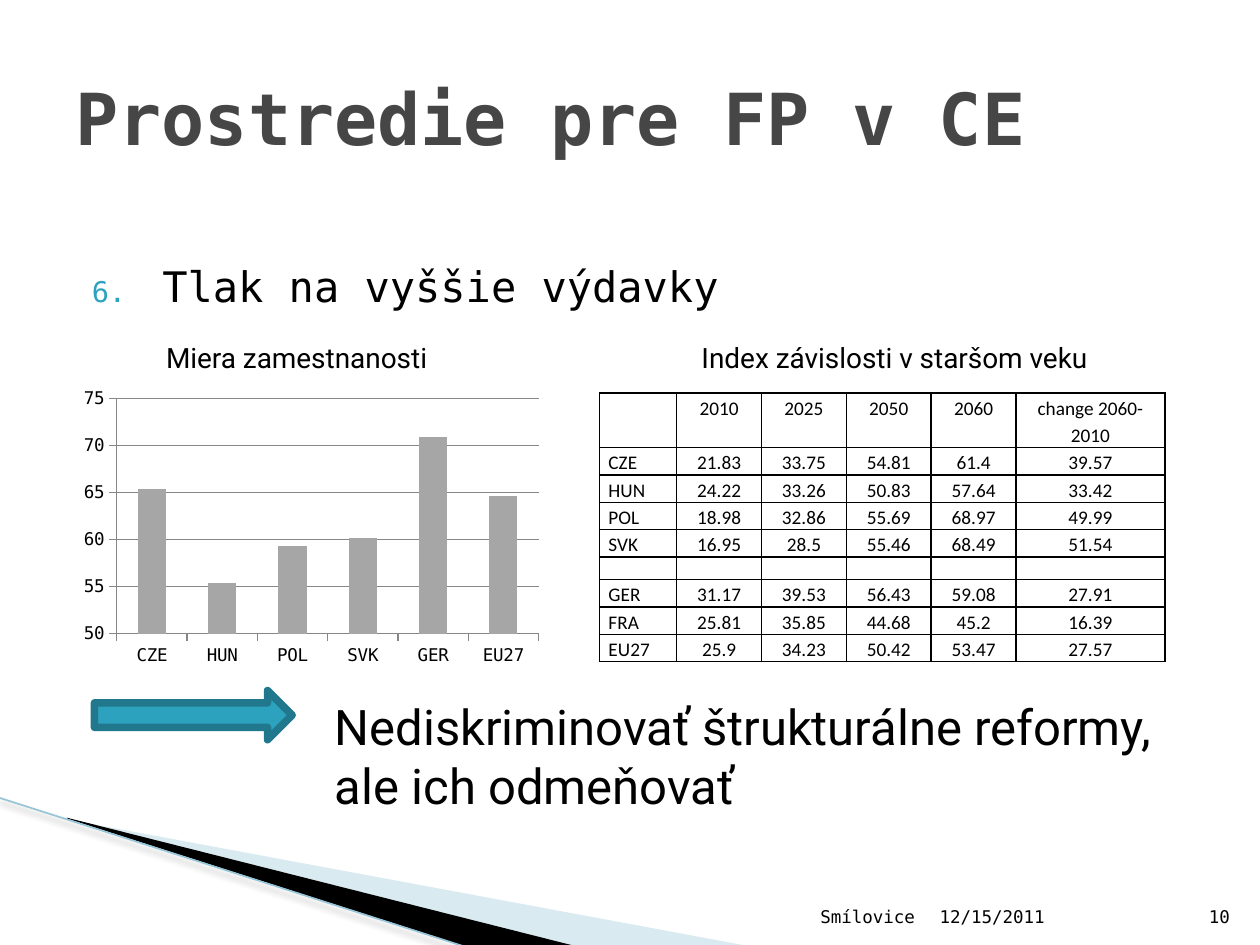
from dataclasses import dataclass

from lxml.etree import SubElement
from pptx import Presentation
from pptx.chart.data import CategoryChartData
from pptx.dml.color import RGBColor
from pptx.enum.chart import XL_CHART_TYPE, XL_TICK_MARK
from pptx.enum.shapes import MSO_CONNECTOR, MSO_SHAPE
from pptx.enum.text import MSO_ANCHOR, MSO_AUTO_SIZE, PP_ALIGN
from pptx.oxml.ns import qn
from pptx.util import Pt


@dataclass(frozen=True)
class Theme:
    mono: str = "DejaVu Sans Mono"
    sans: str = "Roboto"
    table_font: str = "Calibri"
    ink: str = "000000"
    title: str = "464646"
    accent: str = "2DA2BF"
    accent_dark: str = "21788D"
    pale: str = "A0CBDC"
    edge: str = "97C5D8"
    bar: str = "A6A6A6"
    grid: str = "878787"
    title_size: float = 41
    message_size: float = 28
    body_size: float = 24
    caption_size: float = 16
    table_size: float = 11
    small_size: float = 10


THEME = Theme()

EMPLOYMENT = {"CZE": 65.4, "HUN": 55.4, "POL": 59.3,
              "SVK": 60.2, "GER": 70.9, "EU27": 64.6}

DEPENDENCY = [
    ["", "2010", "2025", "2050", "2060", "change 2060-2010"],
    ["CZE", "21.83", "33.75", "54.81", "61.4", "39.57"],
    ["HUN", "24.22", "33.26", "50.83", "57.64", "33.42"],
    ["POL", "18.98", "32.86", "55.69", "68.97", "49.99"],
    ["SVK", "16.95", "28.5", "55.46", "68.49", "51.54"],
    [""] * 6,
    ["GER", "31.17", "39.53", "56.43", "59.08", "27.91"],
    ["FRA", "25.81", "35.85", "44.68", "45.2", "16.39"],
    ["EU27", "25.9", "34.23", "50.42", "53.47", "27.57"],
]
COLUMN_WIDTHS = [44] + [48.5] * 4 + [85]


def rgb(code):
    return RGBColor.from_string(code)


def style_font(font, name, size, color=THEME.ink, bold=False):
    font.name, font.size, font.bold = name, Pt(size), bold
    font.color.rgb = rgb(color)


def add_text(page, text, left, top, width, height, *, font=THEME.mono,
             size=THEME.small_size, color=THEME.ink, bold=False,
             align=PP_ALIGN.LEFT, anchor=MSO_ANCHOR.TOP, grow=False):
    box = page.shapes.add_textbox(Pt(left), Pt(top), Pt(width), Pt(height))
    frame = box.text_frame
    frame.word_wrap = True
    frame.vertical_anchor = anchor
    frame.auto_size = MSO_AUTO_SIZE.SHAPE_TO_FIT_TEXT if grow else MSO_AUTO_SIZE.NONE
    para = frame.paragraphs[0]
    para.alignment = align
    span = para.add_run()
    span.text = text
    style_font(span.font, font, size, color, bold)
    return para


def number_paragraph(para, start, indent, hanging):
    props = para._p.get_or_add_pPr()
    props.set("marL", str(Pt(indent)))
    props.set("indent", str(Pt(-hanging)))
    color = SubElement(props, qn("a:buClr"))
    SubElement(color, qn("a:srgbClr"), val=THEME.accent)
    SubElement(props, qn("a:buSzPct"), val="68000")
    SubElement(props, qn("a:buFont"), typeface=THEME.mono)
    SubElement(props, qn("a:buAutoNum"), type="arabicPeriod", startAt=str(start))


def add_wedge(page, points, color, opacity=None):
    start, *rest = [(Pt(x), Pt(y)) for x, y in points]
    builder = page.shapes.build_freeform(*start)
    builder.add_line_segments(rest, close=True)
    wedge = builder.convert_to_shape()
    wedge.shadow.inherit = False
    wedge.line.fill.background()
    wedge.fill.solid()
    wedge.fill.fore_color.rgb = rgb(color)
    if opacity is not None:
        tint = wedge._element.spPr.find(".//" + qn("a:srgbClr"))
        SubElement(tint, qn("a:alpha"), val=str(opacity * 1000))


def add_edge(page, x1, y1, x2, y2):
    edge = page.shapes.add_connector(MSO_CONNECTOR.STRAIGHT, Pt(x1), Pt(y1), Pt(x2), Pt(y2))
    edge.line.width = Pt(0.95)
    edge.line.color.rgb = rgb(THEME.edge)
    effects = SubElement(edge._element.spPr, qn("a:effectLst"))
    shadow = SubElement(effects, qn("a:outerShdw"), blurRad=str(Pt(4)),
                        dist=str(Pt(3)), dir="5400000", rotWithShape="0")
    color = SubElement(shadow, qn("a:srgbClr"), val=THEME.ink)
    SubElement(color, qn("a:alpha"), val="35000")


def add_arrow(page, left, top, width, height):
    arrow = page.shapes.add_shape(MSO_SHAPE.RIGHT_ARROW, Pt(left), Pt(top),
                                  Pt(width), Pt(height))
    arrow.shadow.inherit = False
    arrow.fill.solid()
    arrow.fill.fore_color.rgb = rgb(THEME.accent)
    arrow.line.color.rgb = rgb(THEME.accent_dark)
    arrow.line.width = Pt(4.33)
    SubElement(arrow.line._get_or_add_ln(), qn("a:round"))


def add_bar_chart(page, values, left, top, width, height):
    data = CategoryChartData()
    data.categories = list(values)
    data.add_series("Series 1", list(values.values()))
    chart = page.shapes.add_chart(XL_CHART_TYPE.COLUMN_CLUSTERED, Pt(left), Pt(top),
                                  Pt(width), Pt(height), data).chart
    chart.has_legend = chart.has_title = False
    style_font(chart.font, THEME.mono, THEME.small_size)
    plot = chart.plots[0]
    plot.vary_by_categories = False
    plot.gap_width, plot.overlap = 150, 0
    bars = plot.series[0].format.fill
    bars.solid()
    bars.fore_color.rgb = rgb(THEME.bar)
    scale = chart.value_axis
    scale.minimum_scale, scale.maximum_scale, scale.major_unit = 50, 75, 5
    scale.has_major_gridlines = True
    for axis in (scale, chart.category_axis):
        axis.major_tick_mark = XL_TICK_MARK.OUTSIDE
        axis.format.line.color.rgb = rgb(THEME.grid)
    scale.major_gridlines.format.line.color.rgb = rgb(THEME.grid)


def border_cell(cell):
    props = cell._tc.get_or_add_tcPr()
    for position, side in enumerate(("lnL", "lnR", "lnT", "lnB")):
        line = props.makeelement(qn("a:" + side), {"w": str(Pt(1))})
        fill = SubElement(line, qn("a:solidFill"))
        SubElement(fill, qn("a:srgbClr"), val=THEME.ink)
        props.insert(position, line)


def fill_cell(cell, text, align):
    cell.margin_left = cell.margin_right = Pt(5)
    cell.margin_top = cell.margin_bottom = 0
    cell.fill.background()
    border_cell(cell)
    para = cell.text_frame.paragraphs[0]
    if text:
        para.alignment, para.line_spacing = align, 1.15
        span = para.add_run()
        span.text = text
        style_font(span.font, THEME.table_font, THEME.table_size)
    else:
        SubElement(para._p, qn("a:endParaRPr"), sz=str(THEME.small_size * 100))


def add_grid(page, rows, widths, left, top, row_height):
    table = page.shapes.add_table(len(rows), len(widths), Pt(left), Pt(top),
                                  Pt(sum(widths)), Pt(row_height * len(rows))).table
    table.first_row = table.horz_banding = False
    for column, width in zip(table.columns, widths):
        column.width = Pt(width)
    for r, values in enumerate(rows):
        table.rows[r].height = Pt(row_height)
        for c, text in enumerate(values):
            fill_cell(table.cell(r, c), text, PP_ALIGN.CENTER if c else PP_ALIGN.JUSTIFY)


def main():
    deck = Presentation()
    deck.slide_width, deck.slide_height = Pt(720), Pt(540)
    page = deck.slides.add_slide(deck.slide_layouts[6])

    # Corner decoration
    add_wedge(page, [(39.6, 468.5), (428.4, 540.7), (328.3, 540.7), (39.6, 468)], THEME.pale, 40)
    add_wedge(page, [(38.2, 467.3), (329, 540.7), (267.8, 541.4), (38.9, 468)], THEME.ink)
    add_edge(page, -0.7, 455.8, 267.1, 541.4)

    # Heading and numbered point
    add_text(page, "Prostredie pre FP v CE", 36, 21.6, 648, 90, size=THEME.title_size,
             color=THEME.title, bold=True, anchor=MSO_ANCHOR.MIDDLE)
    point = add_text(page, "Tlak na vyššie výdavky", 36.7, 145.4, 648, 362,
                     size=THEME.body_size)
    number_paragraph(point, 6, 49, 40.3)

    # Footer
    for text, left, width, align in (("Smílovice", 344.9, 185, PP_ALIGN.RIGHT),
                                     ("12/15/2011", 529.9, 151.2, PP_ALIGN.LEFT),
                                     ("10", 681.1, 28.8, PP_ALIGN.RIGHT)):
        add_text(page, text, left, 504.7, width, 28.8, align=align, anchor=MSO_ANCHOR.BOTTOM)

    # Chart and table with their captions
    add_bar_chart(page, EMPLOYMENT, 42.5, 218.9, 270.7, 164.9)
    add_grid(page, DEPENDENCY, COLUMN_WIDTHS, 342.7, 224.6, 13)
    for text, left, width in (("Miera zamestnanosti", 87.8, 209.5),
                              ("Index závislosti v staršom veku", 393.8, 266.4)):
        add_text(page, text, left, 190.8, width, 26.6, font=THEME.sans,
                 size=THEME.caption_size, grow=True)

    # Conclusion
    add_arrow(page, 54, 394.6, 113, 28.1)
    add_text(page, "Nediskriminovať štrukturálne reformy, ale ich odmeňovať",
             184.3, 394.6, 481.7, 74.9, font=THEME.sans, size=THEME.message_size, grow=True)

    deck.save("out.pptx")


if __name__ == "__main__":
    main()
